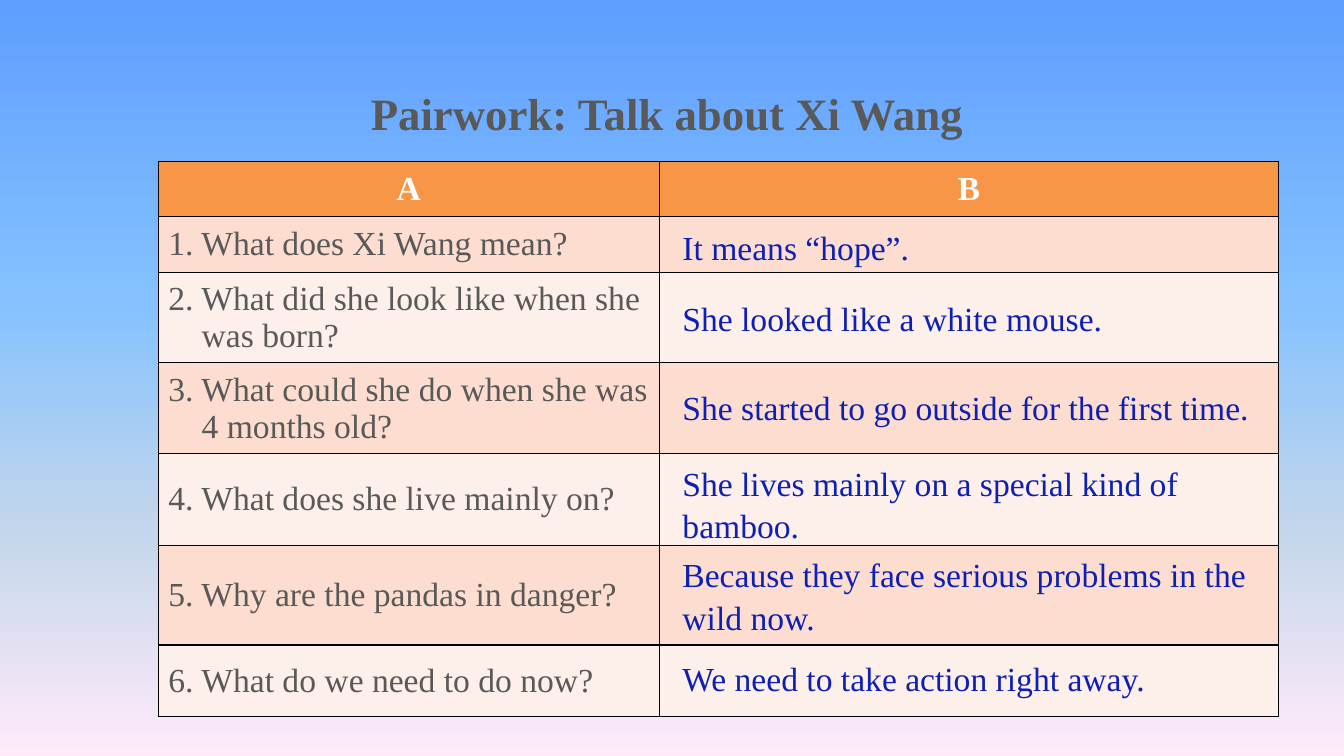
from pptx import Presentation
from pptx.dml.color import RGBColor
from pptx.enum.text import MSO_ANCHOR as ANCHOR, MSO_AUTO_SIZE as AUTO_SIZE, PP_ALIGN as ALIGN
from pptx.oxml.ns import qn
from pptx.util import Inches, Pt
from lxml.etree import SubElement

FONT = "Times New Roman"
GREY, BLUE, WHITE = "595959", "0D20B3", "FFFFFF"
ORANGE, PEACH, CREAM = "F79646", "FCDDCF", "FDEFE9"
SKY = [(0, "5E9EFF"), (40, "85C2FF"), (70, "C4D6EB"), (100, "FFEBFA")]
COLS = [4.97, 3.88, 2.26]
ROWS = [0.55, 0.55, 0.9, 0.9, 0.91, 0.99, 0.71]
QUESTIONS = [
    "1. What does Xi Wang mean?",
    "2. What did she look like when she\nwas born?",
    "3. What could she do when she was\n4 months old?",
    "4. What does she live mainly on?",
    "5. Why are the pandas in danger?",
    "6. What do we need to do now?",
]
ANSWERS = [
    (2.18, 2.74, 0.51, "It means “hope”."),
    (2.89, 4.77, 0.51, "She looked like a white mouse."),
    (3.77, 5.88, 0.51, "She started to go outside for the first time."),
    (4.52, 5.19, 0.91, "She lives mainly on a special kind of bamboo."),
    (5.43, 5.88, 0.91, "Because they face serious problems in the wild now."),
    (6.46, 5.24, 0.51, "We need to take action right away."),
]


def rgb(color):
    return RGBColor.from_string(color)


def set_font(p, size, color, bold=False):
    for r in p.runs:
        r.font.name = FONT
        r.font.size = Pt(size)
        r.font.bold = bold
        r.font.color.rgb = rgb(color)


def add_background(s):
    fill = s.background.fill
    fill.gradient()
    fill.gradient_angle = 270
    stops = next(s._element.iter(qn("a:gsLst")))
    for gs in list(stops):
        stops.remove(gs)
    for pos, color in SKY:
        gs = SubElement(stops, qn("a:gs"), pos=str(pos * 1000))
        SubElement(gs, qn("a:srgbClr"), val=color)


def add_text(s, left, top, width, height, text, size, color, bold=False):
    tf = s.shapes.add_textbox(Inches(left), Inches(top), Inches(width), Inches(height)).text_frame
    tf.word_wrap = True
    tf.auto_size = AUTO_SIZE.SHAPE_TO_FIT_TEXT
    tf.text = text
    p = tf.paragraphs[0]
    p.line_spacing = 1.05
    set_font(p, size, color, bold)


def style_cell(cell, color, open_side=None):
    tcPr = cell._tc.get_or_add_tcPr()
    for side in "LRTB":
        ln = SubElement(tcPr, qn(f"a:ln{side}"), w=str(Pt(1)))
        if side == open_side:
            SubElement(ln, qn("a:noFill"))
        else:
            SubElement(SubElement(ln, qn("a:solidFill")), qn("a:srgbClr"), val="000000")
    cell.fill.solid()
    cell.fill.fore_color.rgb = rgb(color)
    cell.vertical_anchor = ANCHOR.MIDDLE


def add_table(s):
    table = s.shapes.add_table(len(ROWS), len(COLS), Inches(1.57), Inches(1.6),
                               Inches(sum(COLS)), Inches(sum(ROWS))).table
    for column, width in zip(table.columns, COLS):
        column.width = Inches(width)
    for row, height in zip(table.rows, ROWS):
        row.height = Inches(height)
    for i, row in enumerate(table.rows):
        color = ORANGE if i == 0 else (CREAM, PEACH)[i % 2]
        for cell, open_side in zip(row.cells, (None, "R", "L")):
            style_cell(cell, color, open_side if i else None)
    table.cell(0, 1).merge(table.cell(0, 2))
    for j, heading in enumerate("AB"):
        tf = table.cell(0, j).text_frame
        tf.text = heading
        tf.paragraphs[0].alignment = ALIGN.CENTER
        set_font(tf.paragraphs[0], 24, WHITE, True)
    for i, question in enumerate(QUESTIONS, 1):
        tf = table.cell(i, 0).text_frame
        tf.text = question
        for p in tf.paragraphs:
            set_font(p, 24, GREY)
        for p in tf.paragraphs[1:]:
            p._p.get_or_add_pPr().set("marL", str(Inches(0.33)))


def main():
    prs = Presentation()
    prs.slide_width, prs.slide_height = Inches(13.33), Inches(7.5)
    s = prs.slides.add_slide(prs.slide_layouts[6])
    add_background(s)
    add_table(s)
    for top, width, height, answer in ANSWERS:
        add_text(s, 6.67, top, width, height, answer, 24, BLUE)
    add_text(s, 3.58, 0.77, 6.73, 0.64, "Pairwork: Talk about Xi Wang", 32, GREY, True)
    prs.save("out.pptx")


if __name__ == "__main__":
    main()
